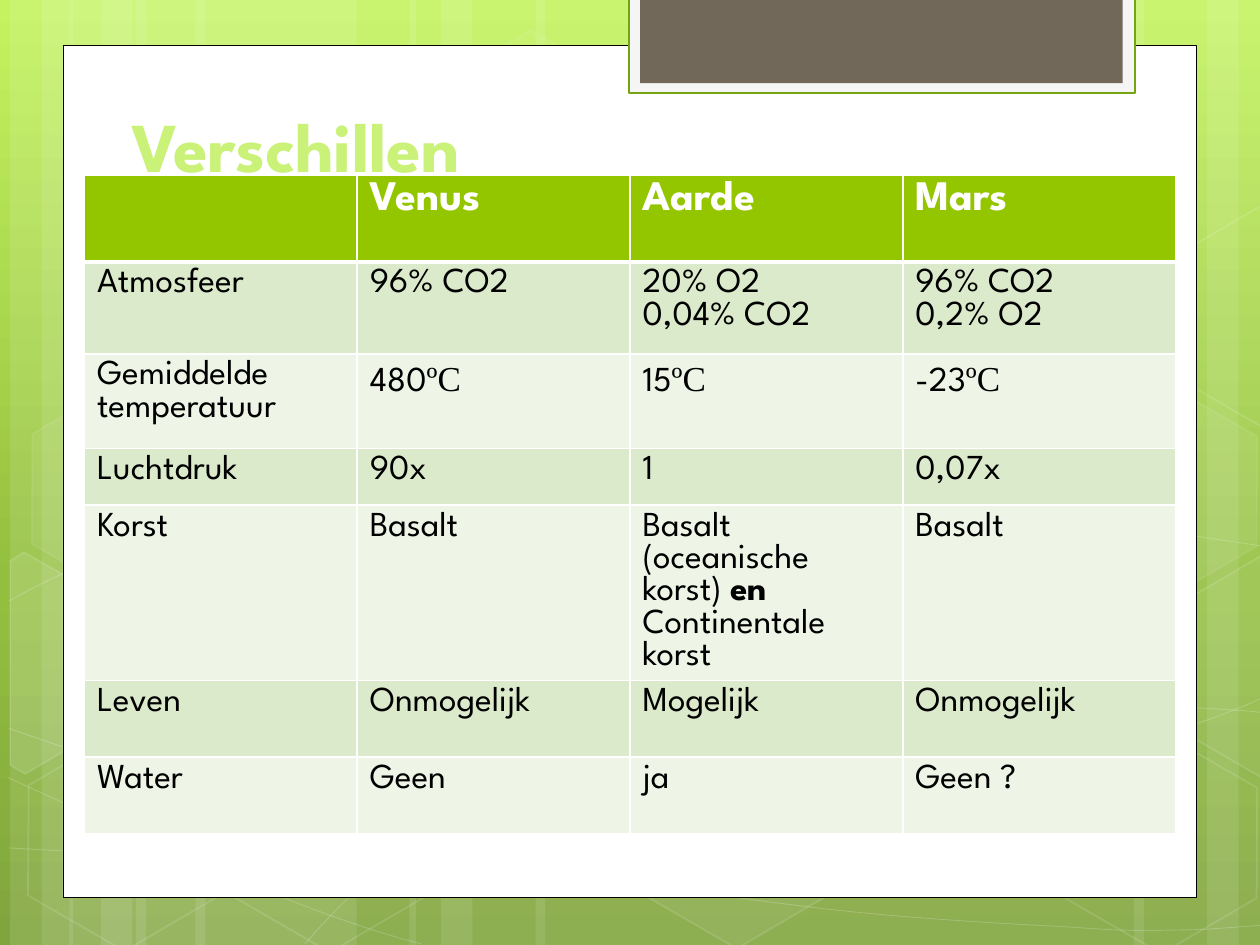
from copy import deepcopy
from math import cos, radians, sin

from lxml import etree
from pptx import Presentation
from pptx.dml.color import RGBColor
from pptx.enum.shapes import MSO_SHAPE
from pptx.enum.text import MSO_ANCHOR, MSO_AUTO_SIZE, PP_ALIGN
from pptx.oxml.ns import qn
from pptx.util import Inches, Pt

RECT, HEXAGON = MSO_SHAPE.RECTANGLE, MSO_SHAPE.HEXAGON
LEFT, MIDDLE = PP_ALIGN.LEFT, MSO_ANCHOR.MIDDLE
GROW = MSO_AUTO_SIZE.SHAPE_TO_FIT_TEXT

THEME = {
    "font": "League Spartan", "symbol_font": "Times New Roman",
    "title_size": 40, "header_size": 24, "body_size": 20,
    "title": "CAF278", "white": "FFFFFF", "black": "000000",
    "header": "94C600", "bands": ("DCEACC", "EEF5E7"),
    "tab_fill": "F5F5F5", "tab_line": "74A510", "tab_inner": "71685A",
    "background": ((0, "C3F35F"), (0.62, "93BF3F"), (1, "81A53E")),
}


def style(shape, fill=None, fill_alpha=100, line=None, width=1, line_alpha=100):
    """Set fill and line; the alphas are percentages of opacity."""
    shape.shadow.inherit = False
    for fmt, color, alpha in ((shape.fill, fill, fill_alpha),
                              (shape.line.fill, line, line_alpha)):
        if color is None or alpha == 0:
            fmt.background()
            continue
        fmt.solid()
        fmt.fore_color.rgb = RGBColor.from_string(color)
        if alpha < 100:
            clr = fmt._xPr.find(qn("a:solidFill")).find(qn("a:srgbClr"))
            etree.SubElement(clr, qn("a:alpha"), val=str(alpha * 1000))
    if line:
        shape.line.width = Pt(width)


def add_text(p, text, size=20, color="000000", bold=False, font=THEME["font"]):
    r = p.add_run()
    r.text = text
    r.font.size, r.font.bold, r.font.name = Pt(size), bold, font
    r.font.color.rgb = RGBColor.from_string(color)


prs = Presentation()
prs.slide_width, prs.slide_height = Inches(10), Inches(7.5)
s = prs.slides.add_slide(prs.slide_layouts[5])
WHITE = THEME["white"]

# Background gradient, top to bottom
fill = s.background.fill
fill.gradient()
fill.gradient_angle = 270
gs_list = next(s._element.iter(qn("a:gsLst")))
gs_list.append(deepcopy(gs_list[0]))
for stop, (position, color) in zip(fill.gradient_stops, THEME["background"]):
    stop.position = position
    stop.color.rgb = RGBColor.from_string(color)

# Translucent vertical bands: left, width, rotation
for x, w, rotation in (
        (1.08, 1.75, 0), (0.08, 0.5, 0), (0.33, 0.83, 0),
        (1.55, 1.75, 0), (0.55, 0.5, 0), (0.8, 0.83, 0),
        (7.33, 1.75, 180), (9.58, 0.5, 180), (9, 0.83, 180),
        (4.25, 3.08, 0), (3.25, 0.5, 0), (3.5, 0.83, 0)):
    band = s.shapes.add_shape(RECT, Inches(x), 0, Inches(w), prs.slide_height)
    band.rotation = rotation
    style(band, WHITE, 10)

# Thin waves: a start point, then Bezier segments of three points each
WAVES = (
    ((0.07, 6.73), (0.61, 6.76), (1.15, 6.79), (1.9, 6.78), (2.65, 6.77), (3.58, 6.75),
     (4.58, 6.65), (5.58, 6.55), (7, 6.36), (7.92, 6.17), (8.83, 5.98), (9.77, 5.68),
     (10.07, 5.51)),
    ((0.07, 4.77), (0.36, 4.61), (0.65, 4.46), (1.21, 4.31), (1.78, 4.16), (2.59, 3.94),
     (3.47, 3.87), (4.36, 3.8), (5.44, 3.79), (6.54, 3.87), (7.64, 3.95), (9.47, 4.26),
     (10.07, 4.34)),
    ((0.06, 6.17), (1.27, 6.72), (2.47, 7.27), (3.34, 7.49)),
    ((0.07, 5.78), (0.38, 5.89), (0.7, 6), (1.28, 6.16), (1.86, 6.31), (2.73, 6.56),
     (3.57, 6.73), (4.4, 6.9), (5.45, 7.08), (6.28, 7.18), (7.11, 7.29), (8, 7.33),
     (8.53, 7.36), (9.05, 7.4), (9.19, 7.38), (9.45, 7.38), (9.71, 7.37), (9.89, 7.35),
     (10.07, 7.34)),
    ((2.42, 7.49), (2.6, 7.29), (2.78, 7.09), (3.02, 6.91), (3.26, 6.73), (3.6, 6.53),
     (3.88, 6.39), (4.16, 6.25), (4.33, 6.19), (4.7, 6.09), (5.06, 5.99), (5.73, 5.85),
     (6.08, 5.78), (6.44, 5.71), (6.49, 5.71), (6.8, 5.69), (7.11, 5.66), (7.6, 5.63),
     (7.94, 5.62), (8.29, 5.61), (8.86, 5.62), (8.86, 5.62), (9.53, 5.62), (9.71, 5.63),
     (9.88, 5.64), (9.97, 5.65), (10.06, 5.66), (10.03, 5.65), (10.06, 5.66)),
)
STRAIGHT_END = (9.53, 5.62)  # the one point reached by a straight line
for wave in WAVES:
    points = [(Inches(x), Inches(y)) for x, y in wave]
    builder = s.shapes.build_freeform(*points[0])
    builder.add_line_segments(points[1:], close=False)
    curve = builder.convert_to_shape()
    segment = None
    for point, ln_to in zip(wave[1:], list(curve._element.iter(qn("a:lnTo")))):
        if point == STRAIGHT_END:
            continue
        if segment is None or len(segment) == 3:
            segment = etree.Element(qn("a:cubicBezTo"))
            ln_to.addprevious(segment)
        segment.append(ln_to[0])
        ln_to.getparent().remove(ln_to)
    style(curve, line=WHITE, width=0.5, line_alpha=20)

# Hexagons: left, top, fill opacity, line opacity
TILT = 30
for x, y, fill_alpha, line_alpha in (
        (3.34, 0.36, 4, 8), (4.97, 5.89, 6, 12), (0.11, 5.91, 0, 12),
        (0.14, 3.12, 7, 8), (1.74, 5.92, 0, 12), (7.53, 4.53, 10, 12),
        (8.34, 5.93, 0, 12), (8.34, 3.14, 7, 8)):
    hexagon = s.shapes.add_shape(HEXAGON, Inches(x), Inches(y), Inches(1.75), Inches(1.52))
    hexagon.adjustments[0] = 0.285
    hexagon.rotation = TILT
    style(hexagon, WHITE, fill_alpha, WHITE, 1, line_alpha)

# Hexagons cut by the slide edge: centre, fill opacity, outline as seen after tilting
COS, SIN = cos(radians(TILT)), sin(radians(TILT))
for cx, cy, fill_alpha, outline in (
        (0.36, 5.35, 10, ((0.08, 4.45), (0.19, 4.38), (0.96, 4.82), (0.95, 5.7),
                          (0.2, 6.14), (0.08, 6.07))),
        (9.85, 5.2, 4, ((9.26, 4.85), (10.01, 4.41), (10.09, 4.46), (10.09, 6.13),
                        (10.02, 6.17), (9.26, 5.73))),
        (9.85, 2.41, 0, ((9.26, 2.07), (10.01, 1.63), (10.1, 1.68), (10.09, 3.35),
                         (10.02, 3.39), (9.26, 2.95)))):
    points = [(Inches(cx + (x - cx) * COS + (y - cy) * SIN),
               Inches(cy - (x - cx) * SIN + (y - cy) * COS)) for x, y in outline]
    builder = s.shapes.build_freeform(*points[0])
    builder.add_line_segments(points[1:] + points[:1])
    cut_hexagon = builder.convert_to_shape()
    cut_hexagon.rotation = TILT
    style(cut_hexagon, WHITE, fill_alpha, WHITE, 1, 12)

# White card and the tab at its top
for x, y, w, h, color, line, width in (
        (0.5, 0.36, 9, 6.76, WHITE, THEME["black"], 0.5),
        (4.99, -0.02, 4.02, 0.76, THEME["tab_fill"], THEME["tab_line"], 1.25),
        (5.08, -0.02, 3.83, 0.68, THEME["tab_inner"], None, 0)):
    panel = s.shapes.add_shape(RECT, Inches(x), Inches(y), Inches(w), Inches(h))
    style(panel, color, line=line, width=width)

# Table: "|" separates runs, a line break separates paragraphs
ROWS = (
    (0.69, ("", "Venus", "Aarde", "Mars")),
    (0.73, ("Atmosfeer", "96% CO2", "20% O2\n0,04% CO2", "96% CO2\n0,2% O2")),
    (0.75, ("Gemiddelde temperatuur", "480|ºC", "15|ºC", "-23|ºC")),
    (0.45, ("Luchtdruk", "90x", "1", "0,07x")),
    (1.39, ("Korst", "Basalt", "Basalt (oceanische korst) |en\nContinentale korst", "Basalt")),
    (0.61, ("Leven", "Onmogelijk", "Mogelijk", "Onmogelijk")),
    (0.61, ("Water", "Geen", "ja", "Geen ?")),
)
table = s.shapes.add_table(len(ROWS), 4, Inches(0.67), Inches(1.39), Inches(8.66),
                           Inches(sum(h for h, _ in ROWS))).table
for row, (height, texts) in enumerate(ROWS):
    table.rows[row].height = Inches(height)
    header = row == 0
    for col, text in enumerate(texts):
        cell = table.cell(row, col)
        tcPr = cell._tc.get_or_add_tcPr()
        for side in ("lnL", "lnR", "lnT", "lnB"):
            thick = (row, side) in ((0, "lnB"), (1, "lnT"))
            ln = etree.SubElement(tcPr, qn(f"a:{side}"), w=str(Pt(3 if thick else 1)))
            solid = etree.SubElement(ln, qn("a:solidFill"))
            etree.SubElement(solid, qn("a:srgbClr"), val=WHITE)
        cell.fill.solid()
        cell.fill.fore_color.rgb = RGBColor.from_string(
            THEME["header"] if header else THEME["bands"][(row - 1) % 2])
        for i, line in enumerate(text.split("\n") if text else ()):
            tf = cell.text_frame
            p = tf.add_paragraph() if i else tf.paragraphs[0]
            for part in line.split("|"):
                add_text(p, part, size=THEME["header_size" if header else "body_size"],
                         color=WHITE if header else THEME["black"],
                         bold=header or part == "en",
                         font=THEME["symbol_font" if part == "ºC" else "font"])

# Title, in front of the table
title = s.shapes.title
title.left, title.top, title.width, title.height = map(Inches, (0.94, 0.76, 8.11, 0.77))
title._element.getparent().append(title._element)
tf = title.text_frame
tf.word_wrap, tf.auto_size, tf.vertical_anchor = True, GROW, MIDDLE
p = tf.paragraphs[0]
p.alignment = LEFT
add_text(p, "Verschillen", size=THEME["title_size"], color=THEME["title"], bold=True)

prs.save("out.pptx")
